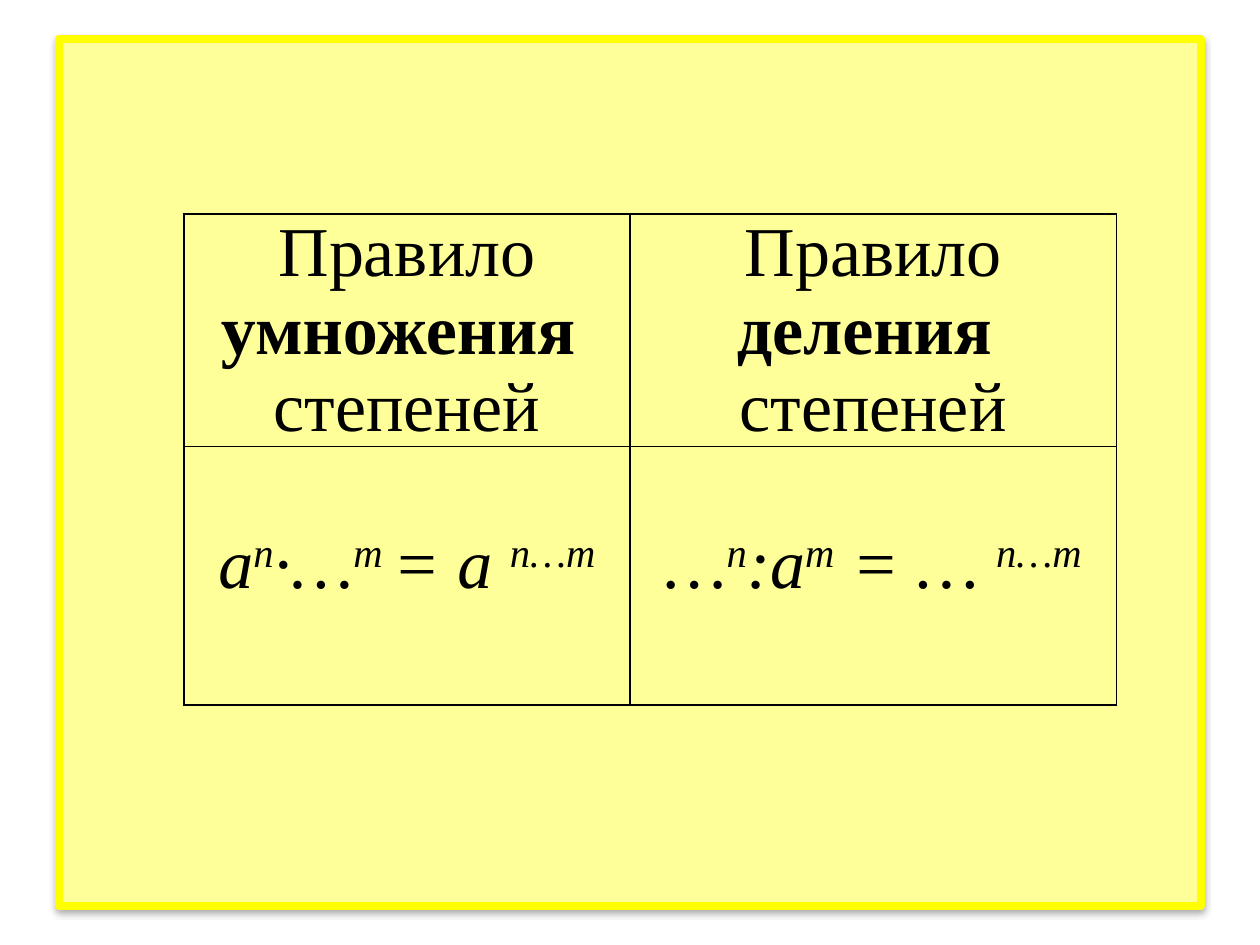
"""Build a slide with a table of the power multiplication and division rules."""
from lxml import etree
from pptx import Presentation
from pptx.dml.color import RGBColor
from pptx.enum.shapes import MSO_SHAPE
from pptx.enum.text import MSO_ANCHOR, PP_ALIGN
from pptx.oxml import parse_xml
from pptx.oxml.ns import nsdecls, qn
from pptx.util import Inches, Pt

RECTANGLE = MSO_SHAPE.RECTANGLE
MIDDLE = MSO_ANCHOR.MIDDLE
CENTER = PP_ALIGN.CENTER
PALE_YELLOW = RGBColor(0xFF, 0xFF, 0x99)
YELLOW = RGBColor(0xFF, 0xFF, 0x00)
BLACK = RGBColor(0x00, 0x00, 0x00)
FONT = "Times New Roman"

PLAIN, BOLD, ITALIC, POWER = "plain", "bold", "italic", "power"
RULES = [
    [
        [[("Правило ", PLAIN), ("умножения ", BOLD)], [("степеней", PLAIN)]],
        [[("Правило ", PLAIN), ("деления ", BOLD)], [("степеней", PLAIN)]],
    ],
    [
        [[("a", ITALIC), ("n", POWER), ("·…", ITALIC), ("m ", POWER),
          ("= a ", ITALIC), ("n…m", POWER)]],
        [[("…", ITALIC), ("n", POWER), (":a", ITALIC), ("m", POWER),
          (" = … ", ITALIC), ("n…m", POWER)]],
    ],
]
COLUMN_WIDTHS = [3.54, 3.86]
ROW_HEIGHTS = [1.84, 2.05]
BOTTOM_MARGINS = [0, 0.18]


def add_panel(page):
    panel = page.shapes.add_shape(
        RECTANGLE, Inches(0.47), Inches(0.31), Inches(9.06), Inches(6.88))
    panel.fill.solid()
    panel.fill.fore_color.rgb = PALE_YELLOW
    panel.line.color.rgb = YELLOW
    panel.line.width = Pt(4.5)
    panel.shadow.inherit = False
    effects = panel._element.spPr.find(qn("a:effectLst"))
    effects.append(parse_xml(
        f'<a:outerShdw {nsdecls("a")} blurRad="{Pt(3.5)}" dist="{Pt(2.2)}" '
        'dir="5400000" rotWithShape="0"><a:srgbClr val="000000">'
        '<a:alpha val="32000"/></a:srgbClr></a:outerShdw>'))


def add_borders(cell):
    properties = cell._tc.get_or_add_tcPr()
    for position, side in enumerate(("lnL", "lnR", "lnT", "lnB")):
        border = etree.Element(qn(f"a:{side}"), w=str(Pt(1)))
        fill = etree.SubElement(border, qn("a:solidFill"))
        etree.SubElement(fill, qn("a:srgbClr"), val=str(BLACK))
        properties.insert(position, border)


def write_cell(cell, lines):
    frame = cell.text_frame
    for index, line in enumerate(lines):
        para = frame.add_paragraph() if index else frame.paragraphs[0]
        para.alignment = CENTER
        for text, style in line:
            span = para.add_run()
            span.text = text
            font = span.font
            font.name, font.size = FONT, Pt(40)
            font.color.rgb = BLACK
            font.bold = style == BOLD
            font.italic = style in (ITALIC, POWER)
            if style == POWER:
                span._r.get_or_add_rPr().set("baseline", "30000")


def add_rules_table(page):
    table = page.shapes.add_table(
        len(ROW_HEIGHTS), len(COLUMN_WIDTHS), Inches(1.46), Inches(1.7),
        Inches(sum(COLUMN_WIDTHS)), Inches(sum(ROW_HEIGHTS))).table
    table.first_row = table.horz_banding = False
    for column, width in zip(table.columns, COLUMN_WIDTHS):
        column.width = Inches(width)
    for row, height, bottom, rules in zip(
            table.rows, ROW_HEIGHTS, BOTTOM_MARGINS, RULES):
        row.height = Inches(height)
        for cell, lines in zip(row.cells, rules):
            cell.fill.background()
            cell.margin_left = cell.margin_right = Inches(0.07)
            cell.margin_top, cell.margin_bottom = 0, Inches(bottom)
            cell.vertical_anchor = MIDDLE
            add_borders(cell)
            write_cell(cell, lines)


def main():
    deck = Presentation()
    deck.slide_width, deck.slide_height = Inches(10), Inches(7.5)
    page = deck.slides.add_slide(deck.slide_layouts[6])
    add_panel(page)
    add_rules_table(page)
    deck.save("out.pptx")


if __name__ == "__main__":
    main()
